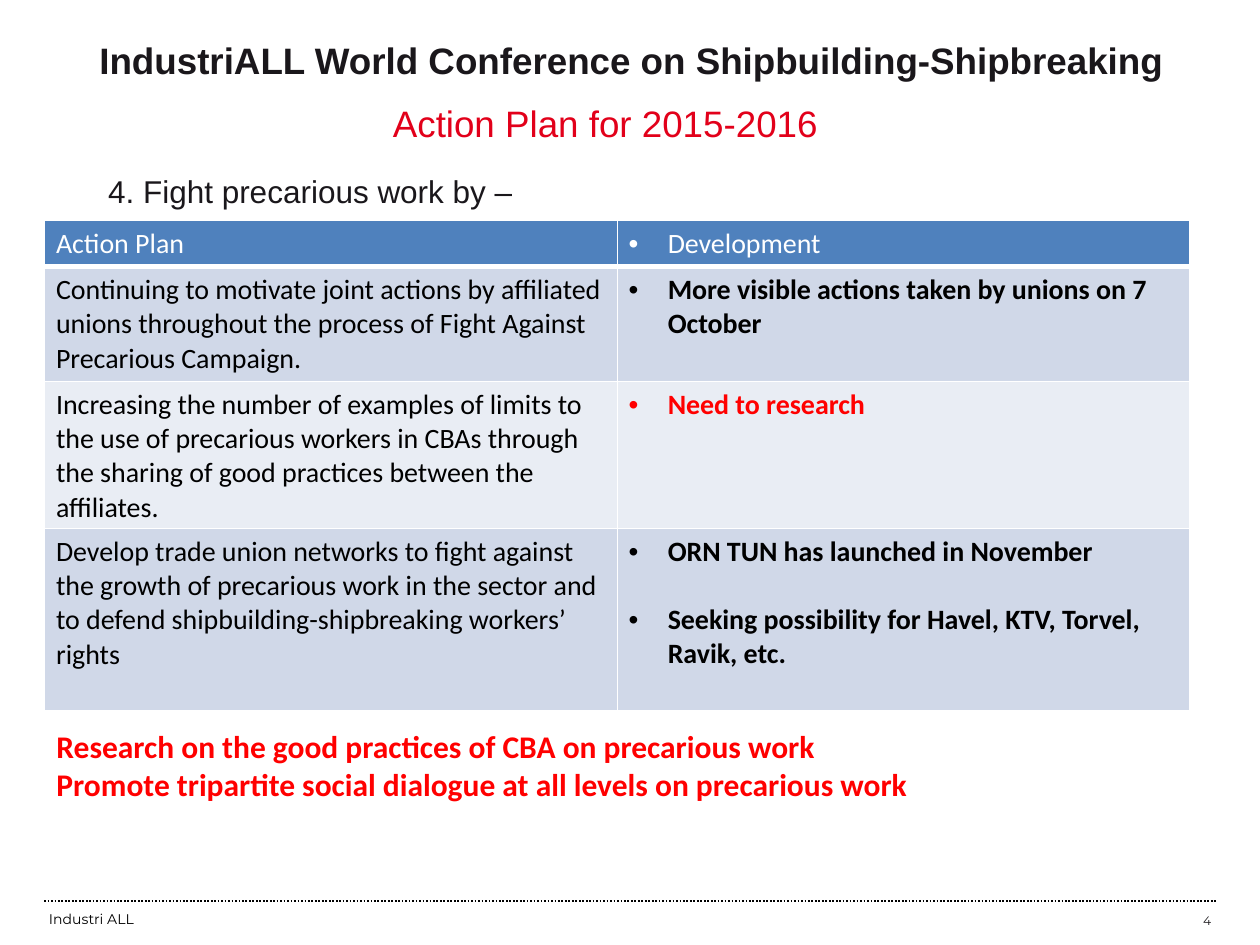
from dataclasses import dataclass

from lxml import etree
from pptx import Presentation
from pptx.dml.color import RGBColor
from pptx.enum.dml import MSO_LINE
from pptx.enum.shapes import MSO_CONNECTOR
from pptx.enum.text import MSO_ANCHOR, PP_ALIGN
from pptx.oxml.ns import qn
from pptx.util import Emu, Inches, Pt

LEFT, CENTER, RIGHT, JUSTIFY = PP_ALIGN.LEFT, PP_ALIGN.CENTER, PP_ALIGN.RIGHT, PP_ALIGN.JUSTIFY
TOP, MIDDLE = MSO_ANCHOR.TOP, MSO_ANCHOR.MIDDLE
DOTTED = MSO_LINE.ROUND_DOT
STRAIGHT = MSO_CONNECTOR.STRAIGHT

COLORS = {
    "ink": "1A171B", "black": "000000", "white": "FFFFFF", "crimson": "E2001A",
    "red": "FF0000", "header": "4F81BD", "band_dark": "D0D8E8", "band_light": "E9EDF4",
}

# The slide is a grid of 100 columns by 75 rows
SLIDE_WIDTH, SLIDE_HEIGHT = Inches(10), Inches(7.5)
COLUMN, ROW = SLIDE_WIDTH / 100, SLIDE_HEIGHT / 75
LINE_GAP = 19.5


@dataclass
class Box:
    column: float
    row: float
    columns: float
    rows: float

    def emu(self) -> list[Emu]:
        return [Emu(round(self.column * COLUMN)), Emu(round(self.row * ROW)),
                Emu(round(self.columns * COLUMN)), Emu(round(self.rows * ROW))]


@dataclass
class TableRow:
    height: float
    action: str
    developments: list[str]
    fill: str
    text_color: str = "black"
    development_color: str = "black"
    bold: bool = True
    bottom_border: float = 1


TABLE_BOX = Box(3.55, 17.5, 90.9, 38.8)
TABLE_ROWS = [
    TableRow(3.6, "Action Plan", ["Development"], "header", "white", "white", False, 3),
    TableRow(9.1, "Continuing to motivate joint actions by affiliated unions throughout the "
             "process of Fight Against Precarious Campaign.",
             ["More visible actions taken by unions on 7 October"], "band_dark"),
    TableRow(11.6, "Increasing the number of examples of limits to the use of precarious workers "
             "in CBAs through the sharing of good practices between the affiliates.",
             ["Need to research"], "band_light", development_color="red"),
    TableRow(14.5, "Develop trade union networks to fight against the growth of precarious work "
             "in the sector and to defend shipbuilding-shipbreaking workers’ rights",
             ["ORN TUN has launched in November",
              "Seeking possibility for Havel, KTV, Torvel, Ravik, etc."], "band_dark"),
]


def rgb(name: str) -> RGBColor:
    return RGBColor.from_string(COLORS[name])


def write_text(frame, lines: list[str], *, size: float, font: str, color: str, bold: bool = False,
               align=LEFT, bullet: bool = False, gap: float = 0) -> None:
    """Fill a text frame, one paragraph per line."""
    frame.word_wrap = True
    for index, line in enumerate(lines):
        paragraph = frame.paragraphs[0] if index == 0 else frame.add_paragraph()
        if bullet:
            properties = paragraph._p.get_or_add_pPr()
            properties.set("marL", str(Inches(0.31)))
            properties.set("indent", str(-Inches(0.31)))
            etree.SubElement(properties, qn("a:buFont")).set("typeface", "Arial")
            etree.SubElement(properties, qn("a:buChar")).set("char", "•")
        paragraph.alignment = align
        if index and gap:
            paragraph.space_before = Pt(gap)
        run = paragraph.add_run()
        run.text = line
        run.font.size, run.font.name, run.font.bold = Pt(size), font, bold
        run.font.color.rgb = rgb(color)


def add_text(slide, box: Box, lines: list[str], *, anchor=TOP, **text_format) -> None:
    frame = slide.shapes.add_textbox(*box.emu()).text_frame
    frame.vertical_anchor = anchor
    write_text(frame, lines, **text_format)


def set_borders(cell, bottom: float) -> None:
    properties = cell._tc.get_or_add_tcPr()
    widths = {"a:lnL": 1, "a:lnR": 1, "a:lnT": 1, "a:lnB": bottom}
    for index, (tag, width) in enumerate(widths.items()):
        border = etree.Element(qn(tag), w=str(Pt(width)))
        fill = etree.SubElement(border, qn("a:solidFill"))
        etree.SubElement(fill, qn("a:srgbClr")).set("val", COLORS["white"])
        properties.insert(index, border)


def add_action_table(slide, box: Box, rows: list[TableRow]) -> None:
    table = slide.shapes.add_table(len(rows), 2, *box.emu()).table
    for column in table.columns:
        column.width = Emu(round(box.columns * COLUMN / 2))
    for index, row in enumerate(rows):
        table.rows[index].height = Emu(round(row.height * ROW))
        action, development = table.cell(index, 0), table.cell(index, 1)
        for cell in (action, development):
            cell.fill.solid()
            cell.fill.fore_color.rgb = rgb(row.fill)
            cell.margin_left = cell.margin_right = Inches(0.09)
            set_borders(cell, row.bottom_border)
        write_text(action.text_frame, [row.action], size=16, font="Calibri", color=row.text_color)
        write_text(development.text_frame, row.developments, size=16, font="Calibri",
                   color=row.development_color, bold=row.bold, bullet=True, gap=LINE_GAP)


def add_dotted_rule(slide, row: float, start: float, end: float) -> None:
    left, top, width, _ = Box(start, row, end - start, 0).emu()
    rule = slide.shapes.add_connector(STRAIGHT, left, top, left + width, top)
    rule.line.color.rgb = rgb("black")
    rule.line.width = Pt(1)
    rule.line.dash_style = DOTTED
    etree.SubElement(rule._element.spPr, qn("a:effectLst"))


def main() -> None:
    presentation = Presentation()
    presentation.slide_width, presentation.slide_height = SLIDE_WIDTH, SLIDE_HEIGHT
    slide = presentation.slides.add_slide(presentation.slide_layouts[6])

    # Footer
    add_dotted_rule(slide, 71.5, 3.5, 96.5)
    add_text(slide, Box(2.9, 72.1, 51.9, 1.6), ["Industri ALL"], anchor=MIDDLE,
             size=8, font="Montserrat", color="black")
    add_text(slide, Box(73.8, 72.2, 23.3, 1.7), ["4"], anchor=MIDDLE,
             size=7, font="Montserrat", color="ink", align=RIGHT)

    # Headings
    add_text(slide, Box(6.9, 1.1, 87.5, 7.3),
             ["IndustriALL World Conference on Shipbuilding-Shipbreaking"], anchor=MIDDLE,
             size=21, font="Arial", color="ink", bold=True)
    add_text(slide, Box(18.4, 7.5, 59.3, 5.4), ["Action Plan for 2015-2016"],
             size=21, font="Arial", color="crimson", align=CENTER)
    add_text(slide, Box(7.6, 13.2, 70, 5), ["4. Fight precarious work by –"],
             size=18, font="Arial", color="ink", align=JUSTIFY)

    # Plan and its development
    add_action_table(slide, TABLE_BOX, TABLE_ROWS)

    # Next steps
    add_text(slide, Box(3.5, 57.2, 90.6, 7.1),
             ["Research on the good practices of CBA on precarious work",
              "Promote tripartite social dialogue at all levels on precarious work"],
             size=18, font="Calibri", color="red", bold=True)

    presentation.save("out.pptx")


if __name__ == "__main__":
    main()
